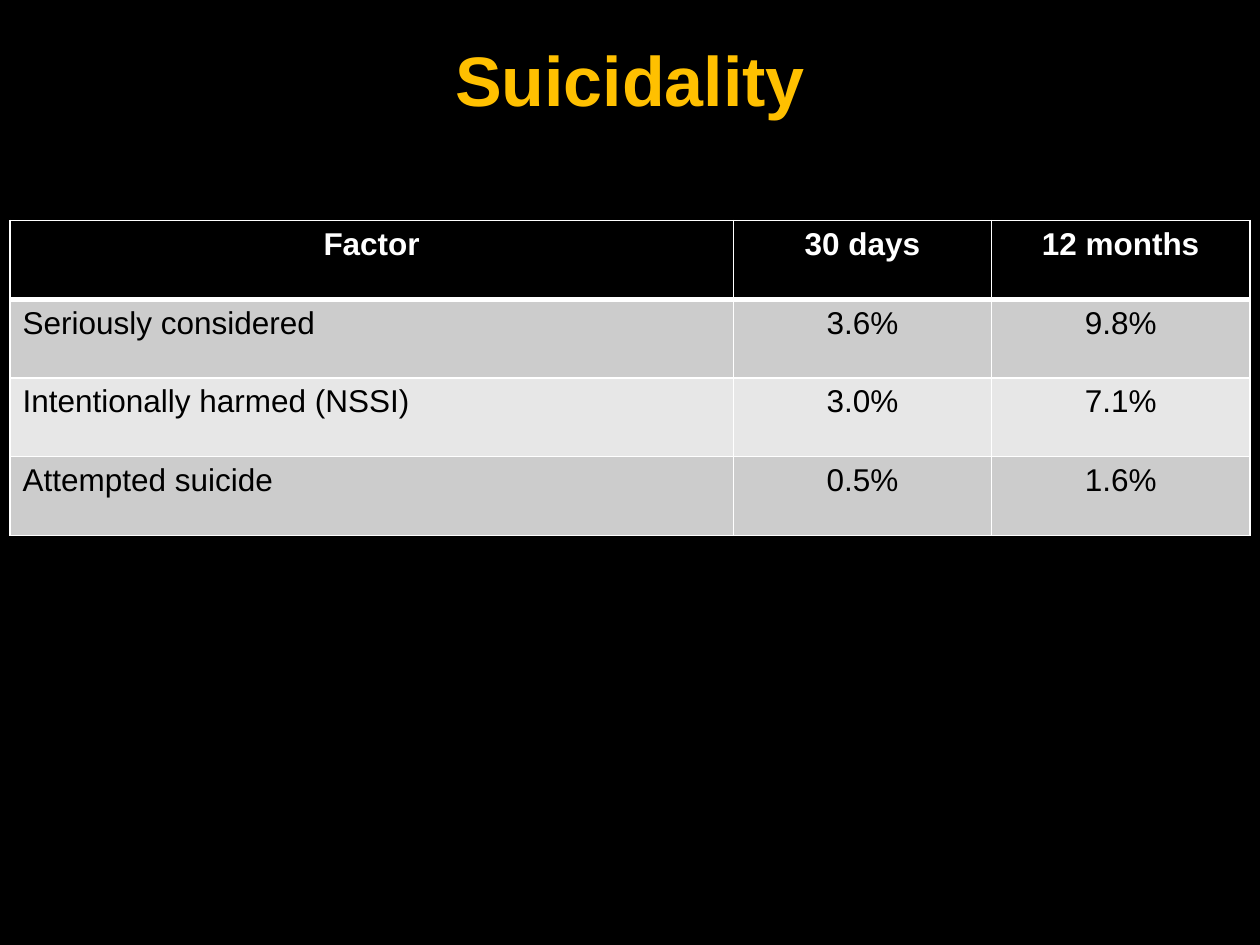
import pptx
import pptx.util
import pptx.dml.color
import pptx.enum.text
import pptx.oxml
import pptx.oxml.ns
from dataclasses import dataclass

Inches, Pt = pptx.util.Inches, pptx.util.Pt
Align = pptx.enum.text.PP_ALIGN
Anchor = pptx.enum.text.MSO_ANCHOR
RGB = pptx.dml.color.RGBColor.from_string


@dataclass(frozen=True)
class Theme:
    font: str = "Arial"
    black: str = "000000"
    white: str = "FFFFFF"
    gold: str = "FFC000"
    bands: tuple = ("CCCCCC", "E7E7E7")
    title: int = 40
    body: int = 18
    thin: int = 1
    thick: int = 3


theme = Theme()


def write(frame, text, size, color, bold, align):
    para = frame.paragraphs[0]
    para.alignment = align
    run = para.add_run()
    run.text = text
    run.font.name = theme.font
    run.font.size = Pt(size)
    run.font.bold = bold
    run.font.color.rgb = RGB(color)


def edge(cell, side, width):
    """Add one border; call in the order L, R, T, B and before the fill."""
    cell._tc.get_or_add_tcPr().append(pptx.oxml.parse_xml(
        f'<a:ln{side} {pptx.oxml.ns.nsdecls("a")} w="{Pt(width)}">'
        f'<a:solidFill><a:srgbClr val="{theme.white}"/></a:solidFill>'
        f'</a:ln{side}>'))


deck = pptx.Presentation()
deck.slide_width, deck.slide_height = Inches(10), Inches(7.5)
slide = deck.slides.add_slide(deck.slide_layouts[6])
back = slide.background.fill
back.solid()
back.fore_color.rgb = RGB(theme.black)

title = slide.shapes.add_textbox(Inches(0.5), 0, Inches(9), Inches(1.25)).text_frame
title.word_wrap = True
title.vertical_anchor = Anchor.MIDDLE
write(title, "Suicidality", theme.title, theme.gold, True, Align.CENTER)

data = [
    ("Factor", "30 days", "12 months"),
    ("Seriously considered", "3.6%", "9.8%"),
    ("Intentionally harmed (NSSI)", "3.0%", "7.1%"),
    ("Attempted suicide", "0.5%", "1.6%"),
]
widths = (5.74, 2.05, 2.05)
height = 2.5
table = slide.shapes.add_table(
    len(data), len(widths), Inches(0.08), Inches(1.75),
    Inches(sum(widths)), Inches(height)).table
for col, width in zip(table.columns, widths):
    col.width = Inches(width)

for r, row in enumerate(data):
    table.rows[r].height = Inches(height / len(data))
    head = r == 0
    fill = theme.black if head else theme.bands[(r - 1) % 2]
    ink = theme.white if head else theme.black
    for c, text in enumerate(row):
        cell = table.cell(r, c)
        edge(cell, "L", theme.thin)
        edge(cell, "R", theme.thin)
        edge(cell, "T", theme.thick if r == 1 else theme.thin)
        edge(cell, "B", theme.thick if head else theme.thin)
        cell.fill.solid()
        cell.fill.fore_color.rgb = RGB(fill)
        align = Align.CENTER if head or c else Align.LEFT
        write(cell.text_frame, text, theme.body, ink, head, align)

deck.save("out.pptx")
